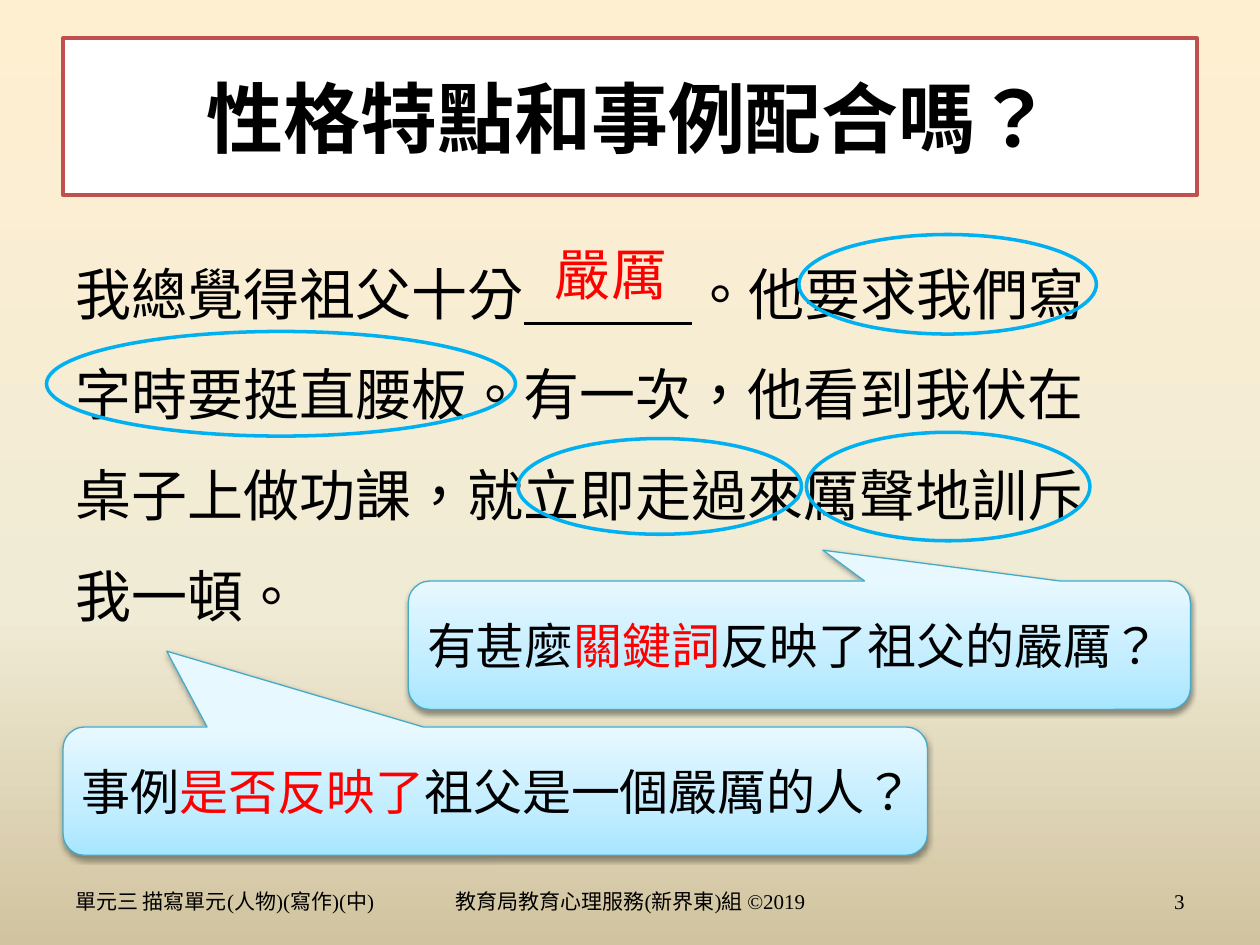
from dataclasses import dataclass

from lxml import etree
from pptx import Presentation
from pptx.dml.color import RGBColor
from pptx.enum import shapes, text
from pptx.oxml import ns
from pptx.util import Pt


@dataclass(frozen=True)
class Theme:
    latin: str = "Times New Roman"
    heading: str = "Noto Sans CJK SC"
    ink: str = "000000"
    key: str = "FF0000"
    panel: str = "FFFFFF"
    border: str = "C0504D"
    ring: str = "00B0F0"
    callout_line: str = "46AAC5"
    callout: tuple = ((0, "A7E6FF"), (35, "C1EDFF"), (100, "E7F8FF"))
    sky: tuple = ((0, "FFEFD1"), (65, "F0EBD5"), (100, "D1C39F"))
    title_size: int = 44
    body_size: int = 32
    question_size: int = 28
    footer_size: int = 12


THEME = Theme()
ALIGN = text.PP_ALIGN
MIDDLE = text.MSO_ANCHOR.MIDDLE


def child(parent, tag, **attributes):
    return etree.SubElement(parent, ns.qn(tag), attributes)


def fill_gradient(fill, stops, angle):
    fill.gradient()
    fill.gradient_angle = angle
    stop_list = fill.gradient_stops[0]._gs.getparent()
    for old in list(stop_list):
        stop_list.remove(old)
    for position, color in stops:
        stop = child(stop_list, "a:gs", pos=str(position * 1000))
        child(stop, "a:srgbClr", val=color)


def write(shape, parts, size, font=THEME.latin, east=None, bold=False,
          align=ALIGN.LEFT, anchor=MIDDLE, wrap=True, spacing=None, before=None):
    frame = shape.text_frame
    frame.word_wrap = wrap
    frame.vertical_anchor = anchor
    paragraph = frame.paragraphs[0]
    paragraph.alignment = align
    paragraph.line_spacing = spacing
    paragraph.space_before = before
    for wording, style in parts:
        run = paragraph.add_run()
        run.text = wording
        run.font.name = font
        run.font.size = Pt(size)
        run.font.bold = bold
        run.font.underline = style.get("underline", False)
        run.font.color.rgb = RGBColor.from_string(style.get("color", THEME.ink))
        properties = run._r.get_or_add_rPr()
        properties.set("lang", "zh-TW")
        if east:
            child(properties, "a:ea", typeface=east)
    return frame


def add_outlined(parent, kind, box, line, width):
    shape = parent.add_shape(kind, *map(Pt, box))
    shape.shadow.inherit = False
    shape.fill.background()
    shape.line.color.rgb = RGBColor.from_string(line)
    shape.line.width = Pt(width)
    return shape


def add_label(slide, box, parts, size, **style):
    return write(slide.shapes.add_textbox(*map(Pt, box)), parts, size, **style)


def add_title(slide, wording):
    panel = add_outlined(slide.shapes, shapes.MSO_SHAPE.RECTANGLE,
                         (36, 21.6, 648, 90), THEME.border, 2)
    panel.fill.solid()
    panel.fill.fore_color.rgb = RGBColor.from_string(THEME.panel)
    write(panel, [(wording, {})], THEME.title_size, font=THEME.heading,
          east=THEME.heading, bold=True, align=ALIGN.CENTER)


def add_question(slide, box, tip, parts):
    callout = add_outlined(slide.shapes, shapes.MSO_SHAPE.ROUNDED_RECTANGULAR_CALLOUT,
                           box, THEME.callout_line, 0.75)
    for index, value in enumerate((*tip, 0.17)):
        callout.adjustments[index] = value
    fill_gradient(callout.fill, THEME.callout, 90)
    effects = callout._element.spPr.find(ns.qn("a:effectLst"))
    shadow = child(effects, "a:outerShdw", blurRad=str(Pt(3.1)), dist=str(Pt(1.6)),
                   dir="5400000", rotWithShape="0")
    child(child(shadow, "a:srgbClr", val="000000"), "a:alpha", val="38000")
    write(callout, parts, THEME.question_size)


def add_rings(slide, boxes):
    rings = slide.shapes.add_group_shape()
    for box in boxes:
        add_outlined(rings.shapes, shapes.MSO_SHAPE.OVAL, box, THEME.ring, 2)


def add_footer(slide, columns):
    for left, width, wording, align in columns:
        add_label(slide, (left, 500.4, width, 28.8), [(wording, {})],
                  THEME.footer_size, align=align)


def main():
    deck = Presentation()
    deck.slide_width, deck.slide_height = Pt(720), Pt(540)
    slide = deck.slides.add_slide(deck.slide_layouts[6])
    fill_gradient(slide.background.fill, THEME.sky, 270)
    key = {"color": THEME.key}

    add_title(slide, "性格特點和事例配合嗎？")
    add_label(slide, (36, 125.3, 602, 356.4), [
        ("我總覺得祖父十分", {}),
        ("　　　", {"underline": True}),
        ("。他要求我們寫字時要挺直腰板。有一次，他看到我伏在桌子上做功課，"
         "就立即走過來厲聲地訓斥我一頓。", {}),
    ], THEME.body_size, anchor=text.MSO_ANCHOR.TOP, spacing=1.5, before=Pt(6.4))
    add_question(slide, (36, 415.4, 494, 73.4), (-0.38, -1.09), [
        ("事例", {}), ("是否反映了", key), ("祖父是一個嚴厲的人？", {})])
    add_footer(slide, [
        (36, 205.2, "單元三 描寫單元(人物)(寫作)(中)", ALIGN.LEFT),
        (246.2, 228.2, "教育局教育心理服務(新界東)組 ©2019", ALIGN.CENTER),
        (516.2, 167.8, "3", ALIGN.RIGHT),
    ])
    answer = add_label(slide, (309.6, 133.2, 79.2, 46), [("嚴厲", key)],
                       THEME.body_size, align=ALIGN.CENTER,
                       anchor=text.MSO_ANCHOR.TOP, wrap=False)
    answer.auto_size = text.MSO_AUTO_SIZE.SHAPE_TO_FIT_TEXT
    add_question(slide, (233.3, 332, 447, 73.4), (0.03, -0.74), [
        ("有甚麼", {}), ("關鍵詞", key), ("反映了祖父的嚴厲？", {})])
    add_rings(slide, [
        (26.6, 189.4, 268, 59.8),
        (456.5, 134, 170, 56.9),
        (296, 250.6, 162, 54.7),
        (460.8, 247, 162, 62),
    ])
    deck.save("out.pptx")


if __name__ == "__main__":
    main()
